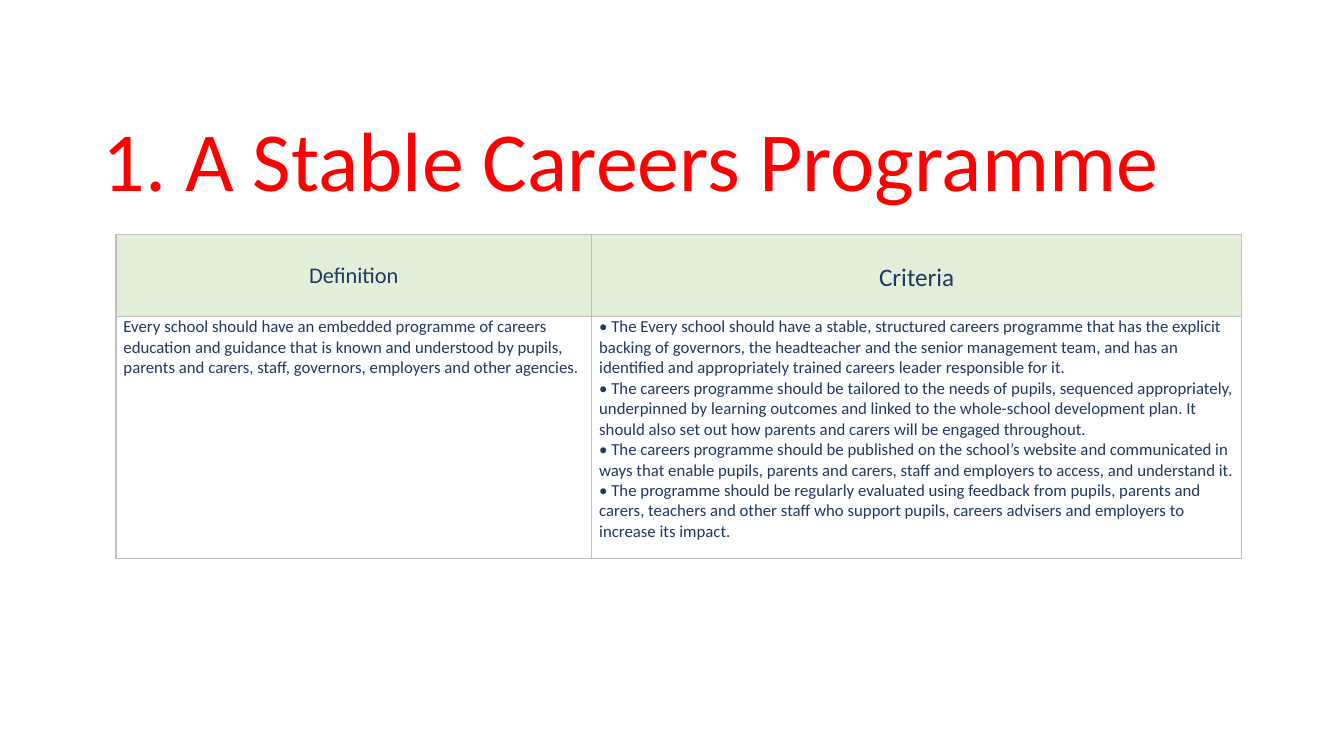
from lxml.etree import SubElement
from pptx import Presentation
from pptx.dml.color import RGBColor
from pptx.enum.text import MSO_ANCHOR as Anchor, PP_ALIGN as Align
from pptx.oxml.ns import qn
from pptx.util import Pt

NAVY = "1F3864"
RED = "FF0000"
PALE_GREEN = "E2EFD9"
GREY = "BFBFBF"

HEADINGS = [("Definition", 16), ("Criteria", 18)]
DEFINITION = [
    "Every school should have an embedded programme of careers education and guidance that is known "
    "and understood by pupils, parents and carers, staff, governors, employers and other agencies.",
]
CRITERIA = [
    "• The Every school should have a stable, structured careers programme that has the explicit "
    "backing of governors, the headteacher and the senior management team, and has an identified "
    "and appropriately trained careers leader responsible for it.",
    "• The careers programme should be tailored to the needs of pupils, sequenced appropriately, "
    "underpinned by learning outcomes and linked to the whole-school development plan. It should "
    "also set out how parents and carers will be engaged throughout.",
    "• The careers programme should be published on the school’s website and communicated in ways "
    "that enable pupils, parents and carers, staff and employers to access, and understand it.",
    "• The programme should be regularly evaluated using feedback from pupils, parents and carers, "
    "teachers and other staff who support pupils, careers advisers and employers to increase its "
    "impact.",
]


def colour(value):
    return RGBColor.from_string(value)


def set_attributes(target, values):
    for key, value in values.items():
        setattr(target, key, value)


def write_paragraphs(frame, lines, size, text_colour, layout):
    frame.word_wrap = True
    frame.text = "\n".join(lines)
    for paragraph in frame.paragraphs:
        set_attributes(paragraph, layout)
        set_attributes(paragraph.font, {"name": "Calibri", "size": Pt(size), "bold": False})
        paragraph.font.color.rgb = colour(text_colour)


def add_title(slide, text):
    title = slide.shapes.add_textbox(Pt(66.24), Pt(38.16), Pt(828), Pt(115.2))
    title.text_frame.vertical_anchor = Anchor.BOTTOM
    write_paragraphs(title.text_frame, [text], 60, RED, {"line_spacing": 0.9})


def add_borders(cell):
    properties = cell._tc.get_or_add_tcPr()
    for side in ("lnL", "lnR", "lnT", "lnB"):
        border = SubElement(properties, qn(f"a:{side}"), w=str(Pt(1)))
        fill = SubElement(border, qn("a:solidFill"))
        SubElement(fill, qn("a:srgbClr"), val=GREY)


def fill_cell(cell, lines, size, layout, top=0, background=None):
    add_borders(cell)
    if background:
        cell.fill.solid()
        cell.fill.fore_color.rgb = colour(background)
    else:
        cell.fill.background()
    set_attributes(cell, {"margin_left": Pt(5.4), "margin_right": Pt(5.4),
                          "margin_top": Pt(top), "margin_bottom": Pt(0)})
    write_paragraphs(cell.text_frame, lines, size, NAVY, layout)


def add_programme_table(slide):
    widths, heights = (339.84, 464.4), (58.5, 172.8)
    table = slide.shapes.add_table(2, 2, Pt(82.8), Pt(167.76),
                                   Pt(sum(widths)), Pt(sum(heights))).table
    set_attributes(table, {"first_row": False, "horz_banding": False})
    for column, width in zip(table.columns, widths):
        column.width = Pt(width)
    for row, height in zip(table.rows, heights):
        row.height = Pt(height)
    for column, (heading, size) in enumerate(HEADINGS):
        fill_cell(table.cell(0, column), [heading], size, {"alignment": Align.CENTER},
                  top=19.5, background=PALE_GREEN)
    for column, lines in enumerate((DEFINITION, CRITERIA)):
        fill_cell(table.cell(1, column), lines, 12, {"alignment": Align.LEFT})


def main():
    deck = Presentation()
    set_attributes(deck, {"slide_width": Pt(960), "slide_height": Pt(540)})
    slide = deck.slides.add_slide(deck.slide_layouts[6])
    add_title(slide, "1. A Stable Careers Programme")
    add_programme_table(slide)
    deck.save("out.pptx")


if __name__ == "__main__":
    main()
